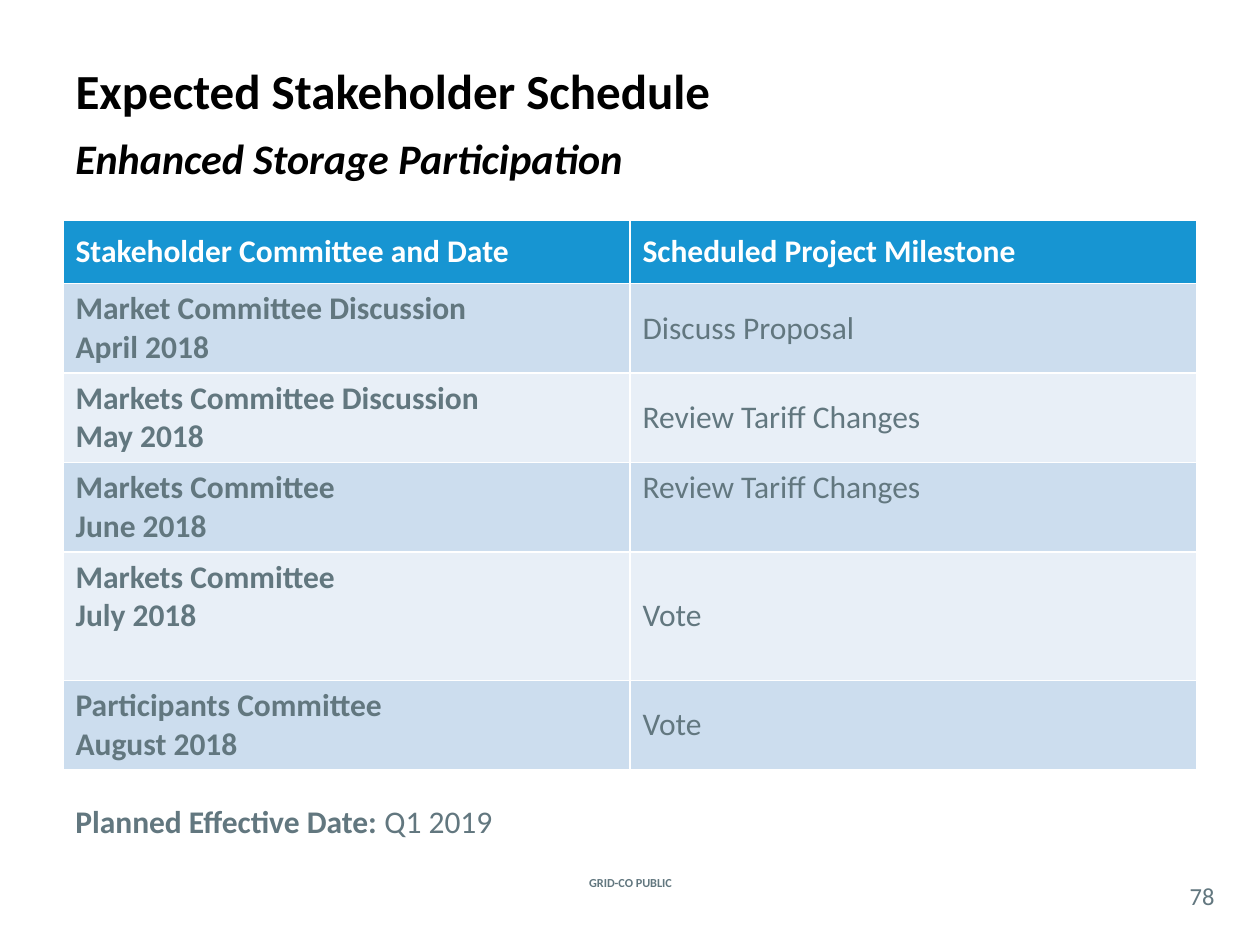
"""Build the stakeholder schedule slide for Enhanced Storage Participation."""
from pptx import Presentation
from pptx.dml.color import RGBColor
from pptx.enum.text import MSO_ANCHOR as Anchor, PP_ALIGN as Align
from pptx.util import Inches, Pt

BLACK = RGBColor(0x00, 0x00, 0x00)
WHITE = RGBColor(0xFF, 0xFF, 0xFF)
SLATE = RGBColor(0x62, 0x77, 0x7F)
BLUE = RGBColor(0x17, 0x95, 0xD2)
BANDS = RGBColor(0xCC, 0xDD, 0xEE), RGBColor(0xE8, 0xEF, 0xF7)

WIDTH, HEIGHT = 10, 7.5
MARGIN = WIDTH / 20
CONTENT = WIDTH - 2 * MARGIN


def style(frame, size, color, bold=False, italic=False, align=Align.LEFT):
    for paragraph in frame.paragraphs:
        paragraph.alignment = align
        for run in paragraph.runs:
            font = run.font
            font.name, font.size, font.color.rgb = "Calibri", Pt(size), color
            font.bold, font.italic = bold, italic


def add_text(left, top, width, height, text, anchor=Anchor.MIDDLE):
    box = slide.shapes.add_textbox(*map(Inches, (left, top, width, height)))
    frame = box.text_frame
    frame.word_wrap = True
    frame.vertical_anchor = anchor
    frame.text = text
    return frame


deck = Presentation()
deck.slide_width, deck.slide_height = Inches(WIDTH), Inches(HEIGHT)
slide = deck.slides.add_slide(deck.slide_layouts[5])

heading = slide.shapes.title
heading.left, heading.top = Inches(MARGIN), Inches(0.42)
heading.width, heading.height = Inches(CONTENT), Inches(0.58)
heading.text_frame.text = "Expected Stakeholder Schedule"
heading.text_frame.vertical_anchor = Anchor.MIDDLE
style(heading.text_frame, 28, BLACK, bold=True)

project = add_text(MARGIN, 1, CONTENT, 0.5, "Enhanced Storage Participation", Anchor.TOP)
style(project, 24, BLACK, bold=True, italic=True)

milestones = [
    ("Stakeholder Committee and Date", "Scheduled Project Milestone"),
    ("Market Committee Discussion\nApril 2018", "Discuss Proposal"),
    ("Markets Committee Discussion\nMay 2018", "Review Tariff Changes"),
    ("Markets Committee\nJune 2018", "Review Tariff Changes"),
    ("Markets Committee\nJuly 2018", "Vote"),
    ("Participants Committee\nAugust 2018", "Vote"),
]
row_heights = [0.5, 0.71, 0.71, 0.71, 1.02, 0.71]
JUNE = 3

schedule = slide.shapes.add_table(
    len(milestones), 2, Inches(MARGIN), Inches(1.75),
    Inches(CONTENT), Inches(sum(row_heights))).table
for row, (entries, row_height) in enumerate(zip(milestones, row_heights)):
    schedule.rows[row].height = Inches(row_height)
    is_header = row == 0
    for column, entry in enumerate(entries):
        cell = schedule.cell(row, column)
        cell.text_frame.text = entry
        cell.fill.solid()
        cell.fill.fore_color.rgb = BLUE if is_header else BANDS[(row - 1) % 2]
        centred = is_header or (column == 1 and row != JUNE)
        cell.vertical_anchor = Anchor.MIDDLE if centred else Anchor.TOP
        style(cell.text_frame, 18, WHITE if is_header else SLATE,
              bold=is_header or column == 0)

effective = add_text(MARGIN, 6.32, 3.62, 0.4, "Planned Effective Date: ", Anchor.TOP)
effective.paragraphs[0].add_run().text = "Q1 2019"
style(effective, 18, SLATE)
effective.paragraphs[0].runs[0].font.bold = True

marking = add_text(4.27, 6.92, 1.47, 0.17, "GRID-CO PUBLIC")
style(marking, 7, SLATE, bold=True, align=Align.CENTER)

page = add_text(9.33, 6.96, 0.42, 0.29, "78")
page.margin_left = page.margin_right = page.margin_top = page.margin_bottom = 0
style(page, 14, SLATE, align=Align.CENTER)

deck.save("out.pptx")
